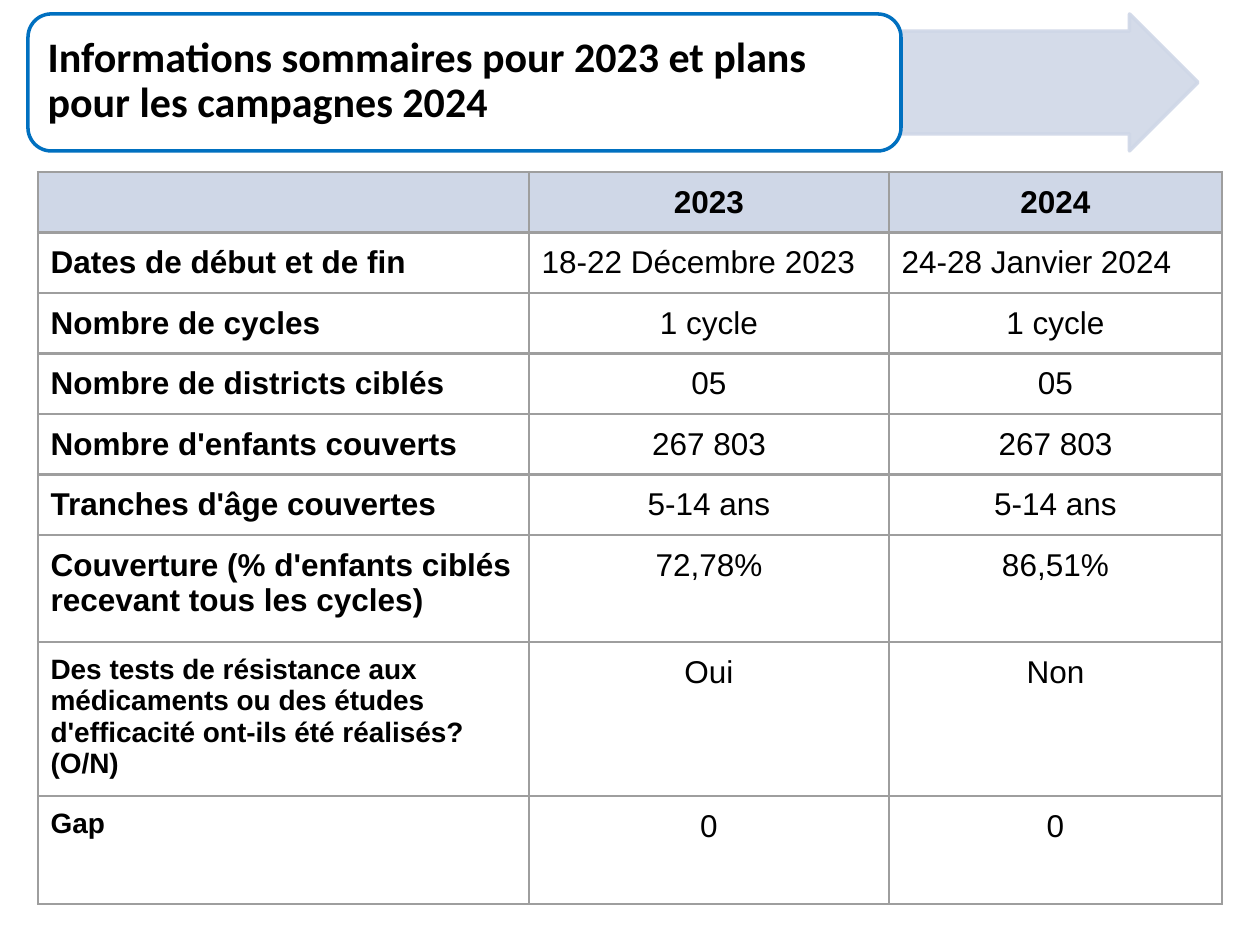
from dataclasses import dataclass
from typing import NamedTuple

from lxml.etree import SubElement
from pptx import Presentation
from pptx.dml.color import RGBColor
from pptx.enum.shapes import MSO_SHAPE as Shape
from pptx.enum.text import MSO_ANCHOR as Anchor, MSO_AUTO_SIZE as AutoSize, PP_ALIGN as Align
from pptx.oxml.ns import qn
from pptx.util import Emu, Inches, Pt

PX = 914400 / 126


def px(n: int) -> Emu:
    return Emu(round(n * PX))


@dataclass(frozen=True)
class Theme:
    text: str = "000000"
    white: str = "FFFFFF"
    pale: str = "CFD7E7"
    outline: str = "0070C0"
    grid: str = "9E9E9E"
    title_font: str = "Calibri"
    table_font: str = "Arial"
    title_size: int = 24
    cell_size: int = 18
    small_size: int = 16


class Box(NamedTuple):
    x: int
    y: int
    w: int
    h: int

    def emu(self) -> list[Emu]:
        return [px(n) for n in self]


class Row(NamedTuple):
    label: str
    y2023: str
    y2024: str
    height: int = 60
    label_size: int = Theme.cell_size
    align: Align = Align.CENTER


THEME = Theme()
ARROW = Box(901, 14, 297, 137)
PANEL = Box(28, 14, 873, 137)
TITLE = Box(35, 20, 859, 123)
TABLE = Box(38, 172, 1184, 753)
COLUMNS = (491, 360, 333)
ROWS = (
    Row("", "2023", "2024"),
    Row("Dates de début et de fin", "18-22 Décembre 2023", "24-28 Janvier 2024", align=Align.LEFT),
    Row("Nombre de cycles", "1 cycle", "1 cycle"),
    Row("Nombre de districts ciblés", "05", "05"),
    Row("Nombre d'enfants couverts", "267 803", "267 803"),
    Row("Tranches d'âge couvertes", "5-14 ans", "5-14 ans"),
    Row("Couverture (% d'enfants ciblés recevant tous les cycles)", "72,78%", "86,51%", 107),
    Row("Des tests de résistance aux médicaments ou des études d'efficacité "
        "ont-ils été réalisés? (O/N)", "Oui", "Non", 154, THEME.small_size),
    Row("Gap", "0", "0", 108, THEME.small_size),
)


def rgb(color: str) -> RGBColor:
    return RGBColor.from_string(color)


def set_font(p, name: str, size: int, bold: bool) -> None:
    p.font.name, p.font.size, p.font.bold = name, Pt(size), bold
    p.font.color.rgb = rgb(THEME.text)


def add_panel(s, kind: Shape, box: Box, fill: str, line: str, adjustments: tuple, alpha: int = 100) -> None:
    sp = s.shapes.add_shape(kind, *box.emu())
    sp.shadow.inherit = False
    for i, value in enumerate(adjustments):
        sp.adjustments[i] = value
    sp.fill.solid()
    sp.fill.fore_color.rgb = rgb(fill)
    sp.line.color.rgb = rgb(line)
    sp.line.width = Pt(2)
    if alpha < 100:
        for color in sp.element.spPr.iter(qn("a:srgbClr")):
            SubElement(color, qn("a:alpha"), val=str(alpha * 1000))


def add_title(s, text: str) -> None:
    title = s.shapes.title
    title.left, title.top, title.width, title.height = TITLE.emu()
    tf = title.text_frame
    tf.text = text
    tf.word_wrap, tf.auto_size, tf.vertical_anchor = True, AutoSize.NONE, Anchor.MIDDLE
    p = tf.paragraphs[0]
    p.alignment, p.line_spacing = Align.LEFT, 0.9
    set_font(p, THEME.title_font, THEME.title_size, True)
    title.element.getparent().append(title.element)  # in front of the panel


def set_borders(cell) -> None:
    tc_pr = cell._tc.get_or_add_tcPr()
    for side in ("lnL", "lnR", "lnT", "lnB"):
        ln = SubElement(tc_pr, qn(f"a:{side}"), w=str(Pt(1.5)))
        SubElement(SubElement(ln, qn("a:solidFill")), qn("a:srgbClr"), val=THEME.grid)


def fill_cell(cell, text: str, size: int, bold: bool, align: Align, header: bool) -> None:
    set_borders(cell)
    if header:
        cell.fill.solid()
        cell.fill.fore_color.rgb = rgb(THEME.pale)
    else:
        cell.fill.background()
    cell.margin_left = cell.margin_right = cell.margin_top = cell.margin_bottom = Inches(0.1)
    cell.text = text
    p = cell.text_frame.paragraphs[0]
    p.alignment = align
    set_font(p, THEME.table_font, size, bold)


def add_campaign_table(s) -> None:
    table = s.shapes.add_table(len(ROWS), len(COLUMNS), *TABLE.emu()).table
    table.first_row = table.horz_banding = False
    for column, width in zip(table.columns, COLUMNS):
        column.width = px(width)
    for i, row in enumerate(ROWS):
        header = i == 0
        table.rows[i].height = px(row.height)
        fill_cell(table.cell(i, 0), row.label, row.label_size, True, Align.LEFT, header)
        for j, value in enumerate((row.y2023, row.y2024), start=1):
            fill_cell(table.cell(i, j), value, THEME.cell_size, header, row.align, header)


def main() -> None:
    prs = Presentation()
    prs.slide_width, prs.slide_height = Inches(10), Inches(7.5)
    s = prs.slides.add_slide(prs.slide_layouts[5])

    # Heading banner
    add_panel(s, Shape.RIGHT_ARROW, ARROW, THEME.pale, THEME.pale, (0.75, 0.5), alpha=89)
    add_panel(s, Shape.ROUNDED_RECTANGLE, PANEL, THEME.white, THEME.outline, (0.17,))
    add_title(s, "Informations sommaires pour 2023 et plans pour les campagnes 2024")

    # Campaign figures by year
    add_campaign_table(s)
    prs.save("out.pptx")


if __name__ == "__main__":
    main()
